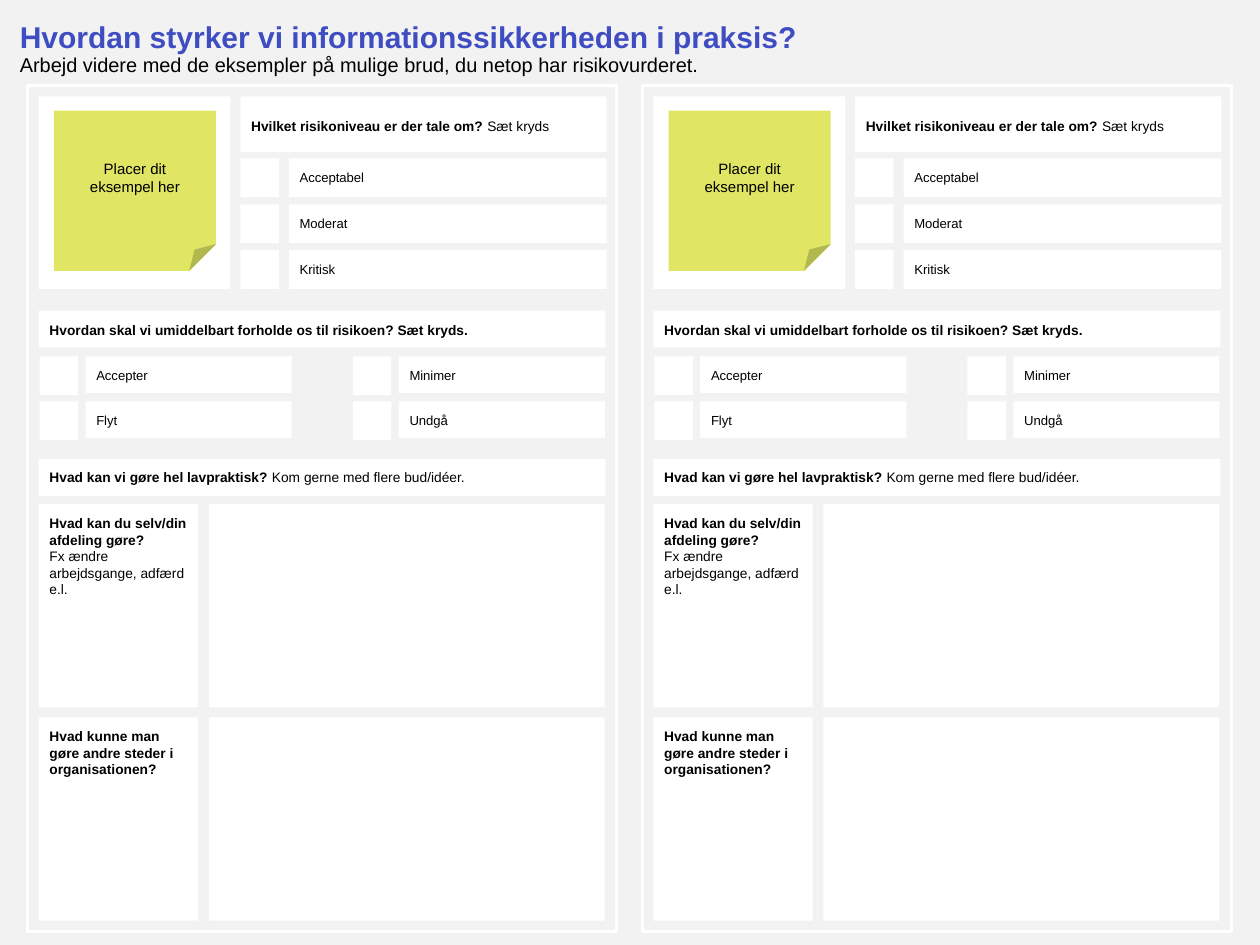
from dataclasses import dataclass

from pptx import Presentation
from pptx.dml.color import RGBColor
from pptx.enum.shapes import MSO_SHAPE
from pptx.enum.text import MSO_ANCHOR, PP_ALIGN
from pptx.util import Pt

PX = 9144
RECT = MSO_SHAPE.RECTANGLE
NOTE = MSO_SHAPE.FOLDED_CORNER
TOP, MIDDLE, BOTTOM = MSO_ANCHOR.TOP, MSO_ANCHOR.MIDDLE, MSO_ANCHOR.BOTTOM
LEFT, CENTER = PP_ALIGN.LEFT, PP_ALIGN.CENTER


@dataclass(frozen=True)
class Theme:
    """Colours, type sizes and font of the worksheet."""
    background: str = "F3F2F2"
    card: str = "FFFFFF"
    sticky: str = "E0E564"
    accent: str = "3F4DC2"
    ink: str = "000000"
    font: str = "Arial"
    title: float = 24
    subtitle: float = 16
    sticky_size: float = 12
    heading: float = 11
    option: float = 10.5
    frame_line: float = 2.5


THEME = Theme()


def color(value):
    """Turn a theme colour into an RGB value."""
    return RGBColor.from_string(value)


def add_span(para, text, size, bold=False, ink=THEME.ink):
    """Add one formatted run to a paragraph."""
    span = para.add_run()
    span.text = text
    formats = {"name": THEME.font, "size": Pt(size), "bold": bold}
    for name, value in formats.items():
        setattr(span.font, name, value)
    span.font.color.rgb = color(ink)


def set_frame(frame, insets, anchor):
    """Set wrapping, anchor and left, top, right and bottom insets."""
    formats = {"word_wrap": True, "vertical_anchor": anchor}
    for side, inset in zip(("left", "top", "right", "bottom"), insets):
        formats[f"margin_{side}"] = inset * PX
    for name, value in formats.items():
        setattr(frame, name, value)


def add_card(page, box, place, kind=RECT, fill=THEME.card):
    """Add a borderless filled shape at a place within a box."""
    left, top, width, height = place
    card = page.shapes.add_shape(kind, (box[0] + left) * PX, (box[1] + top) * PX,
                                 width * PX, height * PX)
    card.shadow.inherit = False
    card.fill.solid()
    card.fill.fore_color.rgb = color(fill)
    card.line.fill.background()
    return card


def write(card, paragraphs, size, anchor=TOP, align=LEFT, insets=(12, 12, 12, 20)):
    """Write paragraphs of (text, bold) spans into a card."""
    frame = card.text_frame
    set_frame(frame, insets, anchor)
    for index, spans in enumerate(paragraphs):
        para = frame.add_paragraph() if index else frame.paragraphs[0]
        para.alignment = align
        for text, bold in spans:
            add_span(para, text, size, bold)


def add_option(page, box, check, label, text):
    """Add a tick box and its labelled card."""
    add_card(page, box, check)
    write(add_card(page, box, label), [[(text, False)]], THEME.option)


def add_title(page, box):
    """Add the title and the instruction below it."""
    title = page.shapes.add_textbox(*(length * PX for length in box))
    set_frame(title.text_frame, (0, 0, 0, 0), TOP)
    para = title.text_frame.paragraphs[0]
    para.line_spacing = 0.9
    add_span(para, "Hvordan styrker vi informationssikkerheden i praksis?",
             THEME.title, True, THEME.accent)
    para.add_line_break()
    add_span(para, "Arbejd videre med de eksempler på mulige brud, du netop har risikovurderet.",
             THEME.subtitle)


def add_risk_level(page, box):
    """Add the sticky note and the choice of risk level."""
    add_card(page, box, (12, 12, 213, 214))
    sticky = add_card(page, box, (29, 28, 180, 178), NOTE, THEME.sticky)
    write(sticky, [[("Placer dit eksempel her", False)]], THEME.sticky_size,
          MIDDLE, CENTER, (20, 20, 20, 20))
    question = add_card(page, box, (236, 12, 407, 62))
    write(question, [[("Hvilket risikoniveau er der tale om? ", True), ("Sæt kryds", False)]],
          THEME.heading, BOTTOM)
    for row, text in enumerate(("Acceptabel", "Moderat", "Kritisk")):
        top = 81 + 51 * row
        add_option(page, box, (236, top, 43, 43), (290, top, 353, 43), text)


def add_response(page, box):
    """Add the choice of immediate response."""
    question = add_card(page, box, (12, 250, 630, 41))
    write(question, [[("Hvordan skal vi umiddelbart forholde os til risikoen? Sæt kryds.", True)]],
          THEME.heading)
    for index, text in enumerate(("Accepter", "Minimer", "Flyt", "Undgå")):
        row, column = divmod(index, 2)
        left, top = 13 + 348 * column, 301 + 50 * row
        add_option(page, box, (left, top, 43, 43), (left + 51, top, 229, 41), text)


def add_actions(page, box):
    """Add the practical questions with their answer fields."""
    heading = add_card(page, box, (12, 415, 630, 41))
    write(heading, [[("Hvad kan vi gøre hel lavpraktisk? ", True),
                     ("Kom gerne med flere bud/idéer.", False)]],
          THEME.heading, BOTTOM, insets=(12, 12, 12, 12))
    questions = (
        [[("Hvad kan du selv/din afdeling gøre?", True)],
         [("Fx ændre arbejdsgange, adfærd e.l.", False)]],
        [[("Hvad kunne man gøre andre steder i organisationen?", True)]],
    )
    for row, paragraphs in enumerate(questions):
        top = 465 + 237 * row
        write(add_card(page, box, (12, top, 177, 226)), paragraphs, THEME.heading)
        add_card(page, box, (201, top, 440, 226))


def add_panel(page, box):
    """Add one framed worksheet panel."""
    frame = add_card(page, box, (0, 0, box[2], box[3]))
    frame.fill.background()
    frame.line.color.rgb = color(THEME.card)
    frame.line.width = Pt(THEME.frame_line)
    for add_region in (add_risk_level, add_response, add_actions):
        add_region(page, box)


def main():
    """Build and save the deck."""
    deck = Presentation()
    deck.slide_width, deck.slide_height = 1400 * PX, 1050 * PX
    page = deck.slides.add_slide(deck.slide_layouts[6])
    page.background.fill.solid()
    page.background.fill.fore_color.rgb = color(THEME.background)
    add_title(page, (22, 25, 1070, 80))
    for column in range(2):
        add_panel(page, (31 + 683 * column, 95, 654, 940))
    deck.save("out.pptx")


if __name__ == "__main__":
    main()
